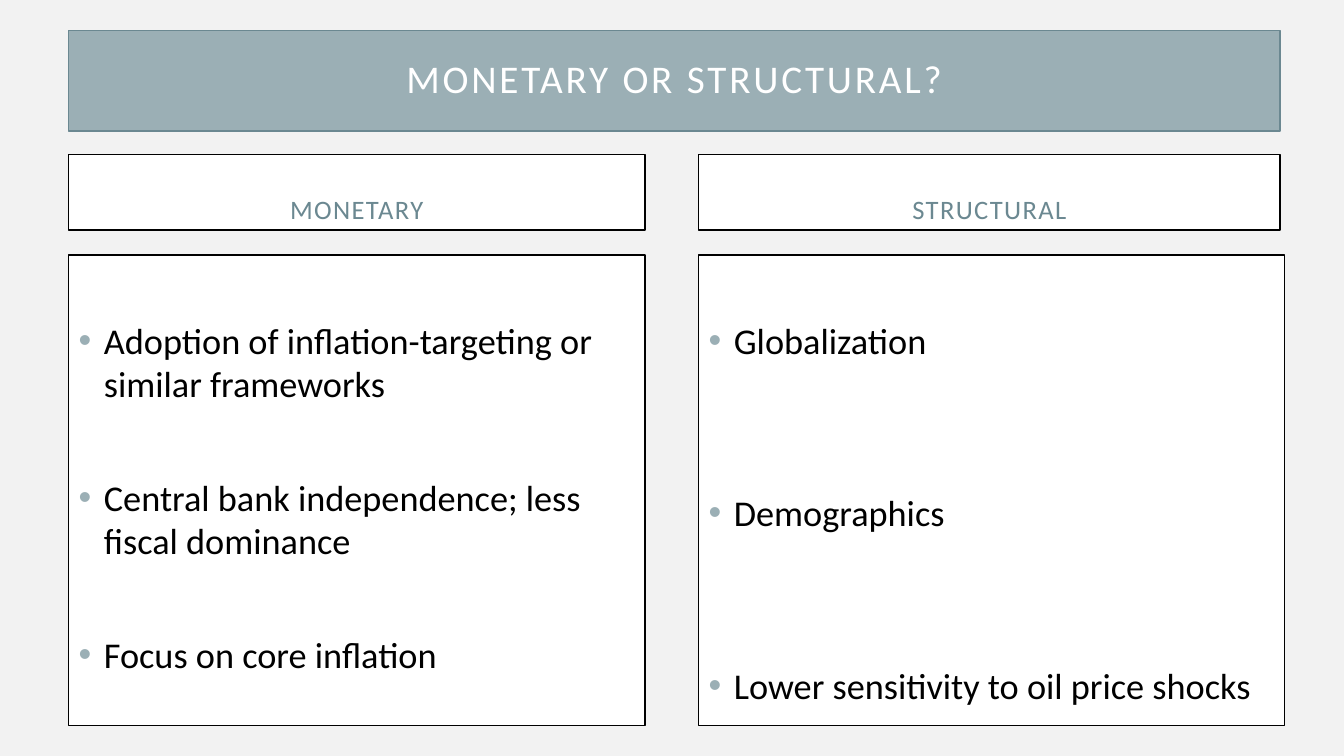
from lxml.etree import SubElement
from pptx import Presentation
from pptx.dml.color import RGBColor
from pptx.enum.text import MSO_ANCHOR, MSO_AUTO_SIZE, PP_ALIGN
from pptx.oxml.ns import qn
from pptx.util import Pt

PAPER = RGBColor(0xF2, 0xF2, 0xF2)
WHITE = RGBColor(0xFF, 0xFF, 0xFF)
BLACK = RGBColor(0x00, 0x00, 0x00)
SAGE = RGBColor(0x9B, 0xAF, 0xB5)
SLATE = RGBColor(0x6B, 0x88, 0x91)
FONT = "Calibri"
COMPARISON_LAYOUT = 4

MARGIN = 49
HEADING_TOP, HEADING_HEIGHT = 110.2, 54
LIST_TOP, LIST_HEIGHT = 182.2, 336.2


def place(shape, box, fill, line):
    """Move a placeholder to its box and give it a fill and an outline."""
    shape.left, shape.top, shape.width, shape.height = map(Pt, box)
    shape.fill.solid()
    shape.fill.fore_color.rgb = fill
    shape.line.color.rgb = line
    shape.line.width = Pt(1)
    shape.text_frame.word_wrap = True
    shape.text_frame.auto_size = MSO_AUTO_SIZE.NONE


def style(para, size, color, tracking=0):
    para.line_spacing = 1.0
    for span in para.runs:
        span.font.name = FONT
        span.font.size = Pt(size)
        span.font.bold = False
        span.font.color.rgb = color
        if tracking:
            span.font._element.set("spc", str(tracking * 100))


def add_bullet(para):
    """Hang a round sage bullet in front of the paragraph."""
    properties = para._p.get_or_add_pPr()
    properties.set("marL", str(Pt(18)))
    properties.set("indent", str(-Pt(18)))
    color = SubElement(properties, qn("a:buClr"))
    SubElement(color, qn("a:srgbClr"), val=str(SAGE))
    SubElement(properties, qn("a:buFont"), typeface="Arial")
    SubElement(properties, qn("a:buChar"), char="•")


def heading(shape, box, text, size, color, tracking, anchor):
    frame = shape.text_frame
    frame.text = text
    frame.vertical_anchor = anchor
    para = frame.paragraphs[0]
    para.alignment = PP_ALIGN.CENTER
    style(para, size, color, tracking)


def title_banner(shape, box):
    place(shape, box, SAGE, SLATE)
    heading(shape, box, "MONETARY OR STRUCTURAL?", 28, WHITE, 2, MSO_ANCHOR.MIDDLE)
    shape.text_frame.paragraphs[0].line_spacing = 0.9


def column_heading(shape, box, text):
    place(shape, box, WHITE, BLACK)
    heading(shape, box, text, 19, SLATE, 1, MSO_ANCHOR.BOTTOM)


def bullet_list(shape, box, items, gap):
    place(shape, box, WHITE, BLACK)
    frame = shape.text_frame
    frame.vertical_anchor = MSO_ANCHOR.TOP
    frame.margin_top = Pt(45)
    frame.text = "\n".join(items)
    for number, para in enumerate(frame.paragraphs):
        style(para, 25.9, BLACK)
        para.space_before = Pt(gap if number else 0)
        add_bullet(para)


def main():
    deck = Presentation()
    deck.slide_width, deck.slide_height = Pt(960), Pt(540)
    page = deck.slides.add_slide(deck.slide_layouts[COMPARISON_LAYOUT])
    page.background.fill.solid()
    page.background.fill.fore_color.rgb = PAPER
    parts = {part.placeholder_format.idx: part for part in page.placeholders}

    title_banner(parts[0], (MARGIN, 21.6, 865.4, 72))

    # Columns: heading slot, left, heading width, list width, gap, heading, items
    columns = [
        (1, MARGIN, 411.8, 411.8, 50, "MONETARY",
         ["Adoption of inflation-targeting or similar frameworks",
          "Central bank independence; less fiscal dominance",
          "Focus on core inflation"]),
        (3, 499, 415.4, 418.3, 92, "STRUCTURAL",
         ["Globalization", "Demographics", "Lower sensitivity to oil price shocks"]),
    ]
    for slot, left, heading_width, list_width, gap, name, items in columns:
        column_heading(parts[slot], (left, HEADING_TOP, heading_width, HEADING_HEIGHT), name)
        bullet_list(parts[slot + 1], (left, LIST_TOP, list_width, LIST_HEIGHT), items, gap)

    deck.save("out.pptx")


if __name__ == "__main__":
    main()
